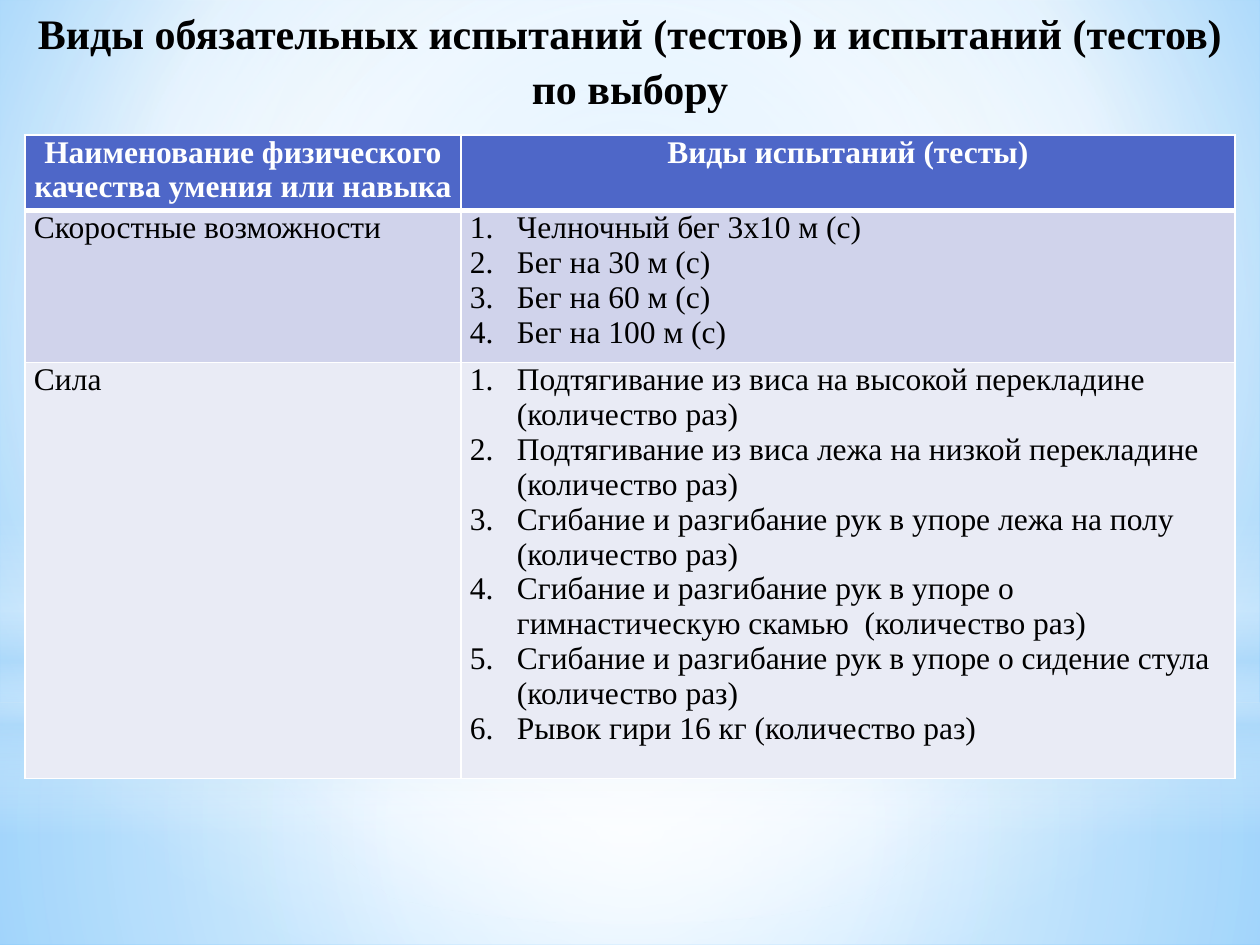
from dataclasses import dataclass

from lxml import etree
from pptx import Presentation
from pptx.dml.color import RGBColor
from pptx.enum import shapes, text
from pptx.oxml.ns import qn
from pptx.util import Emu, Pt


@dataclass(frozen=True)
class Theme:
    font: str = "Times New Roman"
    head: int = 24
    body: int = 18
    ink: str = "000000"
    white: str = "FFFFFF"
    sky: str = "B4DCFA"
    pale: str = "9ED5FF"
    deep: str = "5BB9FF"
    bar: str = "4E67C8"
    rows: tuple = ("D0D3EB", "E9EBF5")


T = Theme()
WIDE, HIGH = 1260, 945
MID = (50, 50, 50, 50)


def px(n):
    return Emu(round(n * 914400 / 126))


def sub(node, tag, **attrs):
    return etree.SubElement(node, qn(tag), {k: str(v) for k, v in attrs.items()})


def blend(fill, root, stops, focus=None):
    fill.background()
    old = root.find(".//" + qn("a:noFill"))
    grad = etree.Element(qn("a:gradFill"), rotWithShape="1")
    old.getparent().replace(old, grad)
    steps = sub(grad, "a:gsLst")
    for pos, tone, alpha in stops:
        stop = sub(steps, "a:gs", pos=pos * 1000)
        tint = sub(stop, "a:srgbClr", val=tone)
        if alpha < 100:
            sub(tint, "a:alpha", val=alpha * 1000)
    if focus:
        ring = sub(grad, "a:path", path="circle")
        sub(ring, "a:fillToRect", **{k: v * 1000 for k, v in zip("ltrb", focus)})
    else:
        sub(grad, "a:lin", ang=90 * 60000, scaled=0)


def write(frame, lines, size=T.body, tone=T.ink, bold=False,
          align=text.PP_ALIGN.LEFT, lead=None, count=False):
    frame.word_wrap = True
    for i, line in enumerate(lines):
        para = frame.paragraphs[0] if i == 0 else frame.add_paragraph()
        para.alignment = align
        if lead:
            para.line_spacing = lead
        if count:
            props = para._p.get_or_add_pPr()
            props.set("marL", str(px(47)))
            props.set("indent", str(-px(47)))
            sub(props, "a:buAutoNum", type="arabicPeriod")
        run = para.add_run()
        run.text = line
        run.font.name, run.font.size, run.font.bold = T.font, Pt(size), bold
        run.font.color.rgb = RGBColor.from_string(tone)


def paint(slide):
    blend(slide.background.fill, slide.element,
          [(0, T.pale, 100), (60, T.white, 100), (100, T.deep, 100)],
          (20, 10, 20, 60))
    rect, oval = shapes.MSO_SHAPE.RECTANGLE, shapes.MSO_SHAPE.OVAL
    layers = [
        (rect, 703, 242, MID, [(0, T.white, 91), (37, T.white, 76), (100, T.sky, 79)]),
        (rect, 0, 703, MID, [(0, T.white, 89), (48, T.white, 62), (100, T.sky, 79)]),
        (rect, 519, 315, None, [(0, T.white, 0), (29, T.white, 30), (45, T.sky, 40),
                                (55, T.white, 26), (65, T.sky, 60), (100, T.white, 0)]),
        (oval, 221, 703, MID, [(0, T.white, 100), (56, T.white, 0)]),
    ]
    for kind, top, high, focus, stops in layers:
        shape = slide.shapes.add_shape(kind, 0, px(top), px(WIDE), px(high))
        shape.shadow.inherit = False
        blend(shape.fill, shape.element, stops, focus)
        shape.line.fill.background()


def title(slide, left, top, wide, high, words):
    box = slide.shapes.title
    box.left, box.top, box.width, box.height = map(px, (left, top, wide, high))
    slide.shapes.element.append(box.element)
    frame = box.text_frame
    write(frame, [words], size=T.head, bold=True, lead=1.1,
          align=text.PP_ALIGN.CENTER)
    frame.vertical_anchor = text.MSO_ANCHOR.MIDDLE
    frame.auto_size = text.MSO_AUTO_SIZE.SHAPE_TO_FIT_TEXT


def edge(cell, **wide):
    props = cell._tc.get_or_add_tcPr()
    for i, side in enumerate("LRTB"):
        line = etree.Element(qn("a:ln" + side), w=str(Pt(wide.get(side, 1))))
        sub(sub(line, "a:solidFill"), "a:srgbClr", val=T.white)
        props.insert(i, line)


def grid(slide, left, top, cols, rows, names, data):
    table = slide.shapes.add_table(len(rows), len(cols), px(left), px(top),
                                   px(sum(cols)), px(sum(rows))).table
    for col, wide in zip(table.columns, cols):
        col.width = px(wide)
    for row, high in zip(table.rows, rows):
        row.height = px(high)
    for cell in table.iter_cells():
        cell.margin_left = cell.margin_right = px(9)
        cell.margin_top = cell.margin_bottom = 0
    for c, name in enumerate(names):
        cell = table.cell(0, c)
        write(cell.text_frame, [name], tone=T.white, bold=True,
              align=text.PP_ALIGN.CENTER)
        tint(cell, T.bar, B=3)
    for r, (skill, tests, align) in enumerate(data, 1):
        parts = [([skill], text.PP_ALIGN.JUSTIFY, False), (tests, align, True)]
        for c, (lines, side, count) in enumerate(parts):
            cell = table.cell(r, c)
            write(cell.text_frame, lines, align=side, count=count)
            tint(cell, T.rows[r - 1], T=3 if r == 1 else 1)


def tint(cell, tone, **wide):
    cell.fill.solid()
    cell.fill.fore_color.rgb = RGBColor.from_string(tone)
    edge(cell, **wide)


def main():
    deck = Presentation()
    deck.slide_width, deck.slide_height = px(WIDE), px(HIGH)
    slide = deck.slides.add_slide(deck.slide_layouts[5])
    paint(slide)
    title(slide, 0, 0, WIDE, 115,
          "Виды обязательных испытаний (тестов) и испытаний (тестов) по выбору")
    grid(slide, 25, 135, (436, 774), (75, 152, 416),
         ("Наименование физического качества умения или навыка",
          "Виды испытаний (тесты)"),
         [("Скоростные возможности",
           ["Челночный бег 3х10 м (с)", "Бег на 30 м (с)",
            "Бег на 60 м (с)", "Бег на 100 м (с)"], text.PP_ALIGN.JUSTIFY),
          ("Сила",
           ["Подтягивание из виса на высокой перекладине (количество раз)",
            "Подтягивание из виса лежа на низкой перекладине (количество раз)",
            "Сгибание и разгибание рук в упоре лежа на полу (количество раз)",
            "Сгибание и разгибание рук в упоре о гимнастическую скамью  (количество раз)",
            "Сгибание и разгибание рук в упоре о сидение стула (количество раз)",
            "Рывок гири 16 кг (количество раз)"], text.PP_ALIGN.LEFT)])
    deck.save("out.pptx")


if __name__ == "__main__":
    main()
